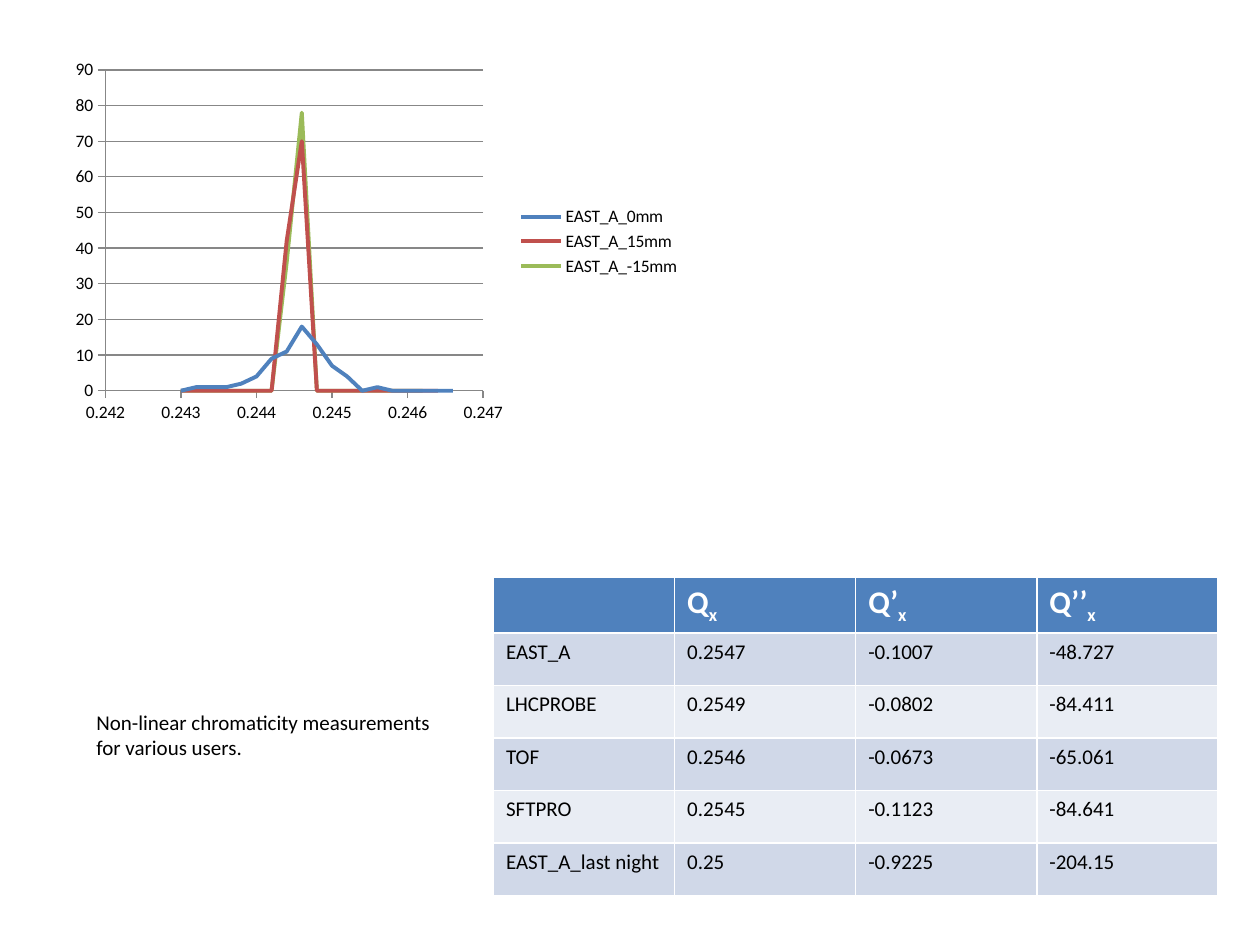
from pptx import Presentation
from pptx.chart.data import XyChartData
from pptx.dml.color import RGBColor
from pptx.enum.chart import XL_CHART_TYPE, XL_LEGEND_POSITION, XL_TICK_MARK
from pptx.enum.text import MSO_AUTO_SIZE
from pptx.util import Pt

SMOOTH = XL_CHART_TYPE.XY_SCATTER_SMOOTH_NO_MARKERS
RIGHT = XL_LEGEND_POSITION.RIGHT
OUTSIDE = XL_TICK_MARK.OUTSIDE
FIT = MSO_AUTO_SIZE.SHAPE_TO_FIT_TEXT

BLACK = RGBColor(0x00, 0x00, 0x00)
WHITE = RGBColor(0xFF, 0xFF, 0xFF)
GRAY = RGBColor(0x87, 0x87, 0x87)
BLUE = RGBColor(0x4F, 0x81, 0xBD)
RED = RGBColor(0xC0, 0x50, 0x4D)
GREEN = RGBColor(0x9B, 0xBB, 0x59)
BANDS = RGBColor(0xD0, 0xD8, 0xE8), RGBColor(0xE9, 0xED, 0xF4)
FONT = "Calibri"

TUNE_START, TUNE_STEP = 0.243, 0.0002
CURVES = [
    ("EAST_A_0mm", BLUE,
     [0, 1, 1, 1, 2, 4, 9, 11, 18, 13, 7, 4, 0, 1, 0, 0, 0, 0, 0]),
    ("EAST_A_15mm", RED, [0] * 7 + [42, 70] + [0] * 9),
    ("EAST_A_-15mm", GREEN, [0] * 7 + [36, 78] + [0] * 8),
]
HEADS = ["", "Q", "Q’", "Q’’"]
USERS = [
    ("EAST_A", "0.2547", "-0.1007", "-48.727"),
    ("LHCPROBE", "0.2549", "-0.0802", "-84.411"),
    ("TOF", "0.2546", "-0.0673", "-65.061"),
    ("SFTPRO", "0.2545", "-0.1123", "-84.641"),
    ("EAST_A_last night", "0.25", "-0.9225", "-204.15"),
]
NOTE = ["Non-linear chromaticity measurements", "for various users."]


def style(font, size, color, bold=False):
    font.name = FONT
    font.size = Pt(size)
    font.color.rgb = color
    font.bold = bold


def scale(axis, low, high, step):
    axis.minimum_scale, axis.maximum_scale = low, high
    axis.major_unit = step
    axis.major_tick_mark = OUTSIDE
    axis.format.line.color.rgb = GRAY


def add_curves(slide, box):
    data = XyChartData()
    for name, _, counts in CURVES:
        series = data.add_series(name)
        for i, count in enumerate(counts):
            series.add_data_point(round(TUNE_START + i * TUNE_STEP, 4), count)
    chart = slide.shapes.add_chart(SMOOTH, *box, data).chart
    style(chart.font, 10, BLACK)
    chart.has_title = False
    chart.has_legend = True
    chart.legend.position = RIGHT
    chart.legend.include_in_layout = False

    scale(chart.category_axis, 0.242, 0.247, 0.001)
    chart.category_axis.has_major_gridlines = False
    scale(chart.value_axis, 0, 90, 10)
    chart.value_axis.major_gridlines.format.line.color.rgb = GRAY

    for series, (_, color, _) in zip(chart.plots[0].series, CURVES):
        series.smooth = True
        series.format.line.color.rgb = color
        series.format.line.width = Pt(2.25)


def fill_cell(cell, text, color):
    cell.fill.solid()
    cell.fill.fore_color.rgb = color
    para = cell.text_frame.paragraphs[0]
    if text:
        para.add_run().text = text
    return para


def add_table(slide, box):
    rows, cols = len(USERS) + 1, len(HEADS)
    table = slide.shapes.add_table(rows, cols, *box).table
    for col, head in enumerate(HEADS):
        para = fill_cell(table.cell(0, col), head, BLUE)
        style(para.font, 18, WHITE, True)
        if head:
            sub = para.add_run()
            sub.text = "x"
            sub._r.get_or_add_rPr().set("baseline", "-25000")
    for row, user in enumerate(USERS):
        for col, text in enumerate(user):
            para = fill_cell(table.cell(row + 1, col), text, BANDS[row % 2])
            style(para.font, 12, BLACK)


def add_note(slide, box):
    frame = slide.shapes.add_textbox(*box).text_frame
    frame.word_wrap = False
    frame.auto_size = FIT
    frame.text = "\n".join(NOTE)
    for para in frame.paragraphs:
        style(para.font, 12, BLACK)


def main():
    deck = Presentation()
    deck.slide_width, deck.slide_height = Pt(720), Pt(540)
    slide = deck.slides.add_slide(deck.slide_layouts[6])
    add_table(slide, (Pt(282), Pt(330), Pt(414), Pt(180)))
    add_note(slide, (Pt(48), Pt(402), Pt(210), Pt(36)))
    add_curves(slide, (Pt(36), Pt(30), Pt(360), Pt(216)))
    deck.save("out.pptx")


if __name__ == "__main__":
    main()
